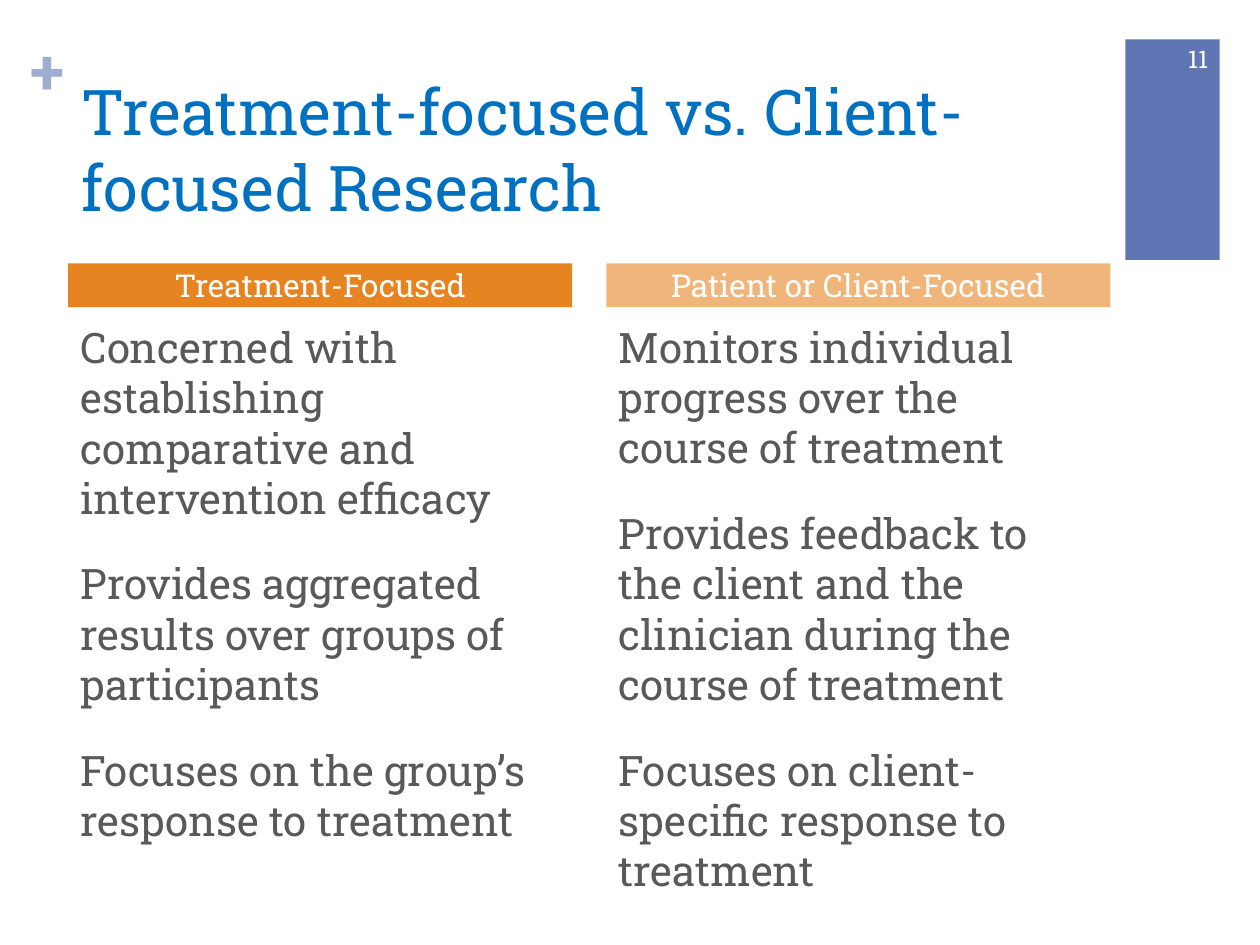
from dataclasses import dataclass

from pptx import Presentation
from pptx import util as u
from pptx.dml.color import RGBColor
from pptx.enum import shapes, text

Pt = u.Pt
FONT = "Roboto Slab"
WHITE = RGBColor(0xFF, 0xFF, 0xFF)
GREY = RGBColor(0x59, 0x59, 0x59)
TITLE = RGBColor(0x00, 0x70, 0xC0)
BLUE = RGBColor(0x60, 0x76, 0xB4)
PALE = RGBColor(0xA0, 0xAD, 0xD2)
ORANGE = RGBColor(0xE6, 0x84, 0x22)
PEACH = RGBColor(0xF0, 0xB5, 0x7A)
LEFT, MID, RIGHT = text.PP_ALIGN.LEFT, text.PP_ALIGN.CENTER, text.PP_ALIGN.RIGHT
TOP, CENTRE = text.MSO_ANCHOR.TOP, text.MSO_ANCHOR.MIDDLE


@dataclass
class Box:
    left: float
    top: float
    width: float
    height: float


@dataclass
class Style:
    size: float
    color: RGBColor
    align: text.PP_ALIGN = LEFT
    anchor: text.MSO_ANCHOR = TOP
    bold: bool = False
    gap: float = 0
    side: float = 7.2
    edge: float = 3.6


@dataclass
class Column:
    left: float
    fill: RGBColor
    head: str
    height: float
    points: list[str]


def write(shape, lines: list[str], style: Style) -> None:
    frame = shape.text_frame
    frame.word_wrap = True
    frame.vertical_anchor = style.anchor
    frame.margin_left = frame.margin_right = Pt(style.side)
    frame.margin_top = frame.margin_bottom = Pt(style.edge)
    frame.text = "\n".join(lines)
    for para in frame.paragraphs:
        para.alignment = style.align
        para.space_before = Pt(style.gap)
        font = para.font
        font.name, font.size, font.bold = FONT, Pt(style.size), style.bold
        font.color.rgb = style.color


def add_text(slide, box: Box, lines: list[str], style: Style) -> None:
    shape = slide.shapes.add_textbox(
        Pt(box.left), Pt(box.top), Pt(box.width), Pt(box.height))
    write(shape, lines, style)


def add_bar(slide, box: Box, fill: RGBColor):
    bar = slide.shapes.add_shape(
        shapes.MSO_SHAPE.RECTANGLE,
        Pt(box.left), Pt(box.top), Pt(box.width), Pt(box.height))
    bar.shadow.inherit = False
    bar.fill.solid()
    bar.fill.fore_color.rgb = fill
    bar.line.fill.background()
    return bar


COLUMNS = [
    Column(39, ORANGE, "Treatment-Focused", 289.5, [
        "Concerned with establishing comparative and intervention efficacy",
        "Provides aggregated results over groups of participants",
        "Focuses on the group’s response to treatment",
    ]),
    Column(346.5, PEACH, "Patient or Client-Focused", 324.5, [
        "Monitors individual progress over the course of treatment",
        "Provides feedback to the client and the clinician during the "
        "course of treatment",
        "Focuses on client-specific response to treatment",
    ]),
]
WIDTH = 288
HEAD = Style(18, WHITE, MID, CENTRE, edge=0)
BODY = Style(24, GREY, gap=20)


def main() -> None:
    deck = Presentation()
    deck.slide_width, deck.slide_height = Pt(720), Pt(540)
    slide = deck.slides.add_slide(deck.slide_layouts[6])

    # Corner block and plus sign
    add_bar(slide, Box(643, 22.5, 54, 126), BLUE)
    add_text(slide, Box(17.5, 18, 21, 44), ["+"],
             Style(36, PALE, bold=True, side=0, edge=0))

    # Title
    add_text(slide, Box(39.5, 38, 594.5, 88),
             ["Treatment-focused vs. Client-focused Research"],
             Style(36, TITLE))

    # Two compared columns
    for col in COLUMNS:
        add_text(slide, Box(col.left, 180, WIDTH, col.height), col.points, BODY)
        bar = add_bar(slide, Box(col.left, 150.5, WIDTH, 25), col.fill)
        write(bar, [col.head], HEAD)

    # Slide number
    add_text(slide, Box(654, 19, 43.5, 29), ["11"],
             Style(14, WHITE, RIGHT, CENTRE))

    deck.save("out.pptx")


if __name__ == "__main__":
    main()
